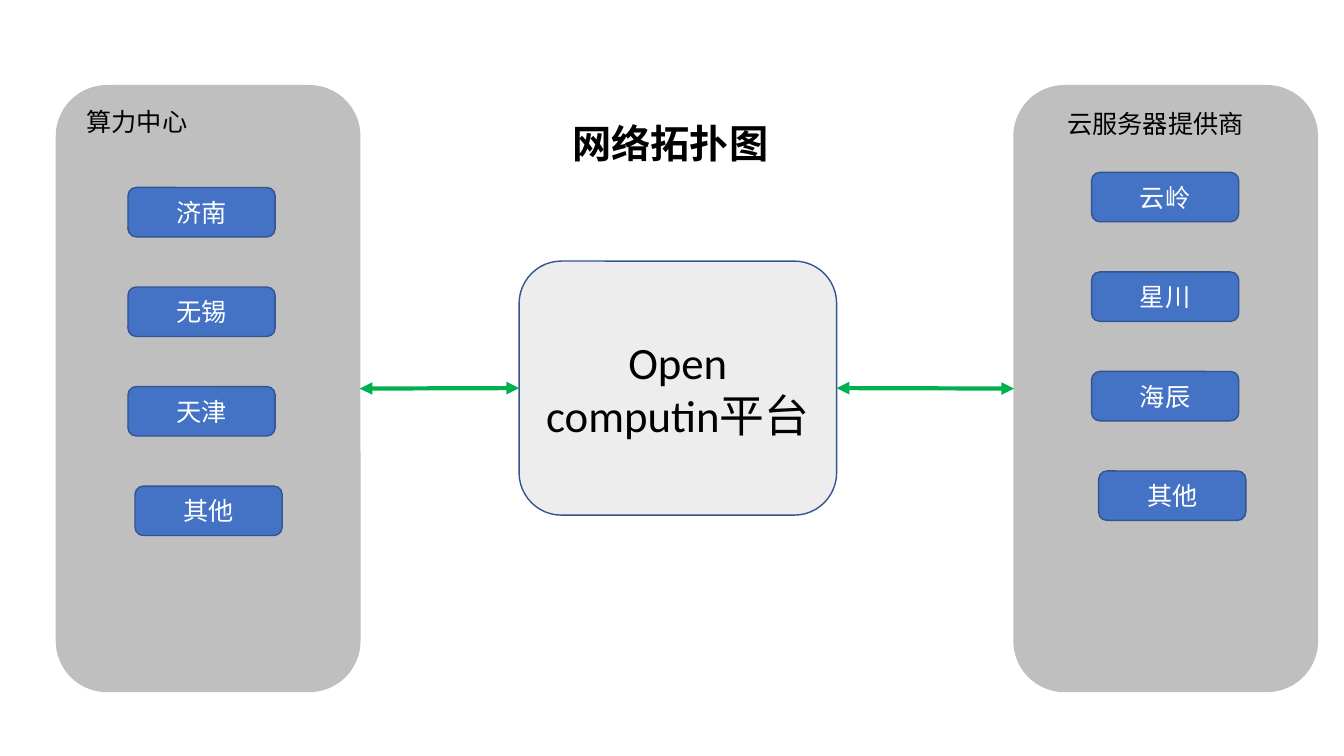
from pptx import Presentation
from pptx.dml.color import RGBColor
from pptx.enum.shapes import MSO_CONNECTOR, MSO_SHAPE
from pptx.enum.text import MSO_ANCHOR, MSO_AUTO_SIZE, PP_ALIGN
from pptx.oxml.ns import qn
from pptx.util import Pt
from lxml import etree

ROUNDED = MSO_SHAPE.ROUNDED_RECTANGLE
STRAIGHT = MSO_CONNECTOR.STRAIGHT
TOP, MIDDLE = MSO_ANCHOR.TOP, MSO_ANCHOR.MIDDLE
LEFT, CENTER = PP_ALIGN.LEFT, PP_ALIGN.CENTER
FIT_SHAPE = MSO_AUTO_SIZE.SHAPE_TO_FIT_TEXT
LEFT_SIDE, RIGHT_SIDE = 1, 3

PANEL_TOP, PANEL_WIDTH, PANEL_HEIGHT = 61.2, 216.72, 432.72
NODE_WIDTH, NODE_HEIGHT, NODE_STEP = 105.12, 35.28, 71.1
LAST_NODE_SHIFT = 5.04


def rgb(value):
    return RGBColor.from_string(value)


class TopologySlide:
    font = "Calibri"
    black, white = "000000", "FFFFFF"
    gray, light, blue = "BFBFBF", "EDEDED", "4472C4"
    outline, green = "325491", "00B050"

    def __init__(self, presentation):
        self.slide = presentation.slides.add_slide(presentation.slide_layouts[5])

    def add_text(self, shape, text, size, color, align, bold=False):
        paragraph = shape.text_frame.paragraphs[0]
        paragraph.alignment = align
        run = paragraph.add_run()
        run.text = text
        run.font.name = self.font
        run.font.size = Pt(size)
        run.font.bold = bold
        run.font.color.rgb = rgb(color)

    def fit_to_text(self, shape):
        frame = shape.text_frame
        frame.word_wrap = False
        frame.auto_size = FIT_SHAPE
        frame.vertical_anchor = TOP

    def title(self, text, left, top, width, height):
        shape = self.slide.shapes.title
        shape.left, shape.top = Pt(left), Pt(top)
        shape.width, shape.height = Pt(width), Pt(height)
        self.fit_to_text(shape)
        self.add_text(shape, text, 28, self.black, LEFT, bold=True)

    def label(self, text, left, top, width, height):
        shape = self.slide.shapes.add_textbox(Pt(left), Pt(top), Pt(width), Pt(height))
        self.fit_to_text(shape)
        self.add_text(shape, text, 18, self.black, LEFT)

    def box(self, left, top, width, height, fill, line):
        shape = self.slide.shapes.add_shape(
            ROUNDED, Pt(left), Pt(top), Pt(width), Pt(height))
        shape.shadow.inherit = False
        shape.fill.solid()
        shape.fill.fore_color.rgb = rgb(fill)
        shape.line.color.rgb = rgb(line)
        shape.line.width = Pt(1)
        shape.text_frame.vertical_anchor = MIDDLE
        return shape

    def panel(self, left):
        return self.box(left, PANEL_TOP, PANEL_WIDTH, PANEL_HEIGHT, self.gray, self.gray)

    def nodes(self, names, left, top):
        """Stack the nodes evenly; the last one sits slightly to the right."""
        for index, name in enumerate(names):
            shift = LAST_NODE_SHIFT if index == len(names) - 1 else 0
            node = self.box(left + shift, top + index * NODE_STEP,
                            NODE_WIDTH, NODE_HEIGHT, self.blue, self.outline)
            self.add_text(node, name, 18, self.white, CENTER)

    def platform(self, text, left, top, width, height):
        shape = self.box(left, top, width, height, self.light, self.outline)
        self.add_text(shape, text, 32, self.black, CENTER)
        return shape

    def link(self, start, end):
        """Join the right side of start to the left side of end, arrows at both ends."""
        connector = self.slide.shapes.add_connector(STRAIGHT, 0, 0, 0, 0)
        connector.begin_connect(start, RIGHT_SIDE)
        connector.end_connect(end, LEFT_SIDE)
        connector.line.color.rgb = rgb(self.green)
        connector.line.width = Pt(3)
        properties = connector.element.spPr
        line = properties.find(qn("a:ln"))
        for tag in ("a:headEnd", "a:tailEnd"):
            etree.SubElement(line, qn(tag), type="triangle")
        etree.SubElement(properties, qn("a:effectLst"))


def main():
    presentation = Presentation()
    presentation.slide_width, presentation.slide_height = Pt(960), Pt(540)
    topology = TopologySlide(presentation)

    topology.title("网络拓扑图", 401.76, 81.36, 156.24, 41.04)

    providers = topology.panel(724.32)
    topology.label("云服务器提供商", 755.28, 74.16, 141.84, 28.8)
    topology.nodes(["云岭", "星川", "海辰", "其他"], 779.76, 123.12)

    centers = topology.panel(40.32)
    topology.label("算力中心", 54.72, 72.72, 87.12, 28.8)
    topology.nodes(["济南", "无锡", "天津", "其他"], 91.44, 133.92)

    platform = topology.platform("Open computin平台", 370.8, 186.48, 226.8, 181.44)
    topology.link(centers, platform)
    topology.link(platform, providers)

    presentation.save("out.pptx")


if __name__ == "__main__":
    main()
